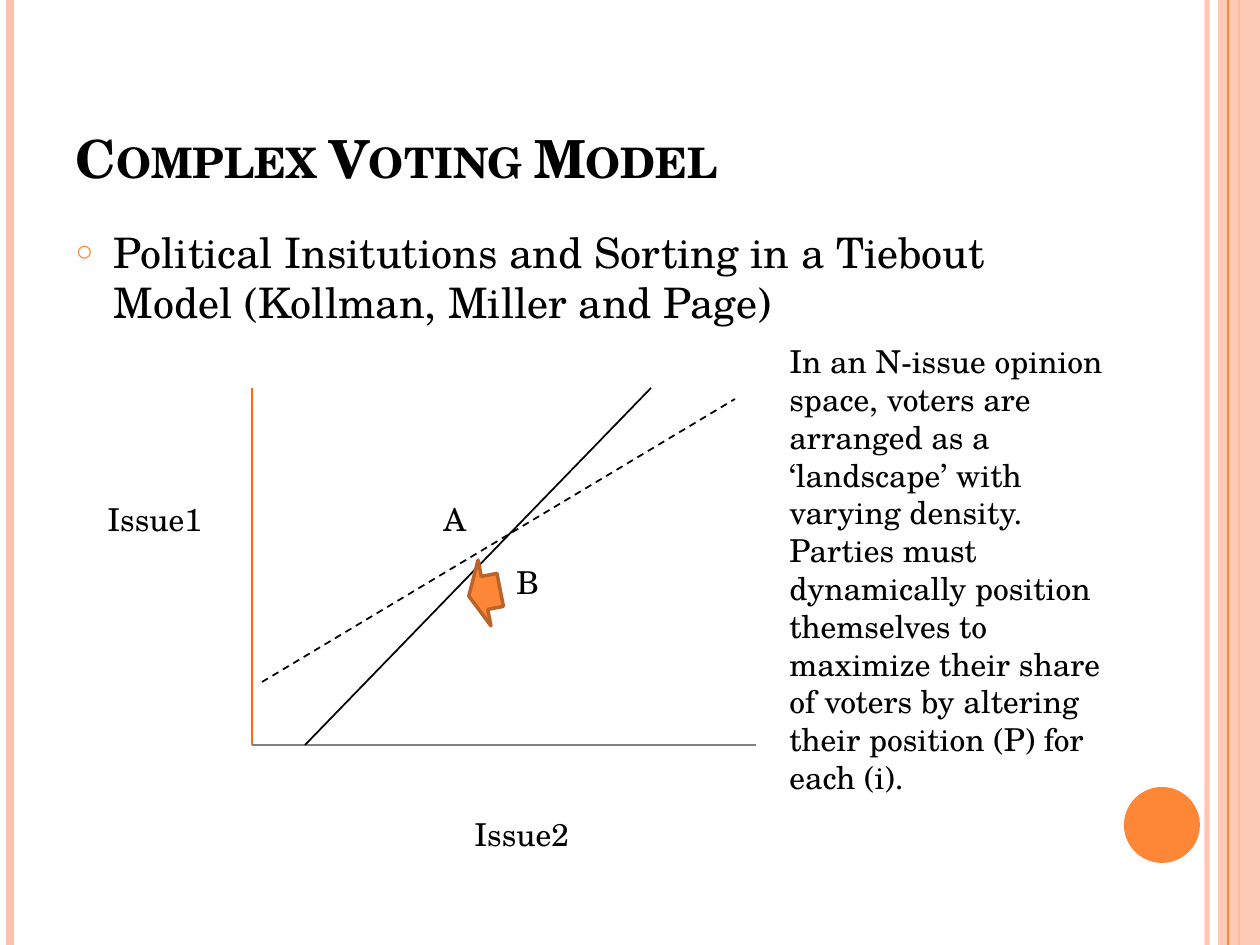
from lxml import etree
from pptx import Presentation
from pptx import util as u
from pptx.dml import color
from pptx.enum import dml, shapes, text
from pptx.oxml import ns

SCALE = 914400 / 126  # EMU in one px
FONT = "TeX Gyre Schola"
ORANGE, PINK, BLACK = "FE8637", "FEC3AE", "000000"
WIDE, HIGH = 1260, 945


def px(*nums):
    return [u.Emu(round(n * SCALE)) for n in nums]


def rgb(code):
    return color.RGBColor.from_string(code)


def sub(node, tag, **attrs):
    item = etree.SubElement(node, ns.qn(tag))
    for key, val in attrs.items():
        item.set(key, str(val))
    return item


def fade(fill, alpha):
    """Set the opacity of a solid fill, in percent."""
    sub(fill.find(".//" + ns.qn("a:srgbClr")), "a:alpha", val=alpha * 1000)


def line(slide, start, end, code, width, dash=None, alpha=None):
    rule = slide.shapes.add_connector(
        shapes.MSO_CONNECTOR.STRAIGHT, *px(*start, *end))
    rule.line.color.rgb = rgb(code)
    rule.line.width = u.Pt(width)
    if dash:
        rule.line.dash_style = dash
    props = rule._element.spPr
    if alpha:
        fade(props.find(ns.qn("a:ln")), alpha)
    sub(props, "a:effectLst")


def solid(slide, kind, box, fill, edge=None, width=2):
    shape = slide.shapes.add_shape(kind, *px(*box))
    shape.shadow.inherit = False
    shape.fill.solid()
    shape.fill.fore_color.rgb = rgb(fill)
    if edge:
        shape.line.color.rgb = rgb(edge)
        shape.line.width = u.Pt(width)
    else:
        shape.line.fill.background()
    return shape


def write(frame, paras, size, bold=False):
    style = {"name": FONT, "size": u.Pt(size), "bold": bold}
    for i, words in enumerate(paras):
        para = frame.add_paragraph() if i else frame.paragraphs[0]
        para.alignment = text.PP_ALIGN.LEFT
        run = para.add_run()
        run.text = words
        for key, val in style.items():
            setattr(run.font, key, val)
        run.font.color.rgb = rgb(BLACK)


def note(slide, box, *paras, wrap=False):
    frame = slide.shapes.add_textbox(*px(*box)).text_frame
    frame.word_wrap = wrap
    write(frame, paras, 18)


def place(holder, box, anchor):
    """Move a placeholder and return its text frame."""
    for key, val in zip(("left", "top", "width", "height"), px(*box)):
        setattr(holder, key, val)
    frame = holder.text_frame
    for key, val in {"word_wrap": True, "vertical_anchor": anchor,
                     "auto_size": text.MSO_AUTO_SIZE.NONE}.items():
        setattr(frame, key, val)
    return frame


def trim(slide, wide, high):
    """Stripes at both edges and the disc at lower right."""
    def stripe(x, code, width, alpha=None):
        line(slide, (x, 0), (x, high), code, width, alpha=alpha)

    stripe(wide - 53, PINK, 3, 93)
    stripe(10, PINK, 4.5)
    stripe(wide - 21, ORANGE, 1.5)
    band = solid(slide, shapes.MSO_SHAPE.RECTANGLE,
                 (wide - 42, 0, 42, high), PINK)
    fade(band._element.spPr, 87)
    stripe(wide - 32, ORANGE, 0.75)
    solid(slide, shapes.MSO_SHAPE.OVAL,
          (wide - 136, high - 158, 76, 76), ORANGE)


def head(slide, box):
    frame = place(slide.shapes.title, box, text.MSO_ANCHOR.BOTTOM)
    write(frame, ["Complex Voting Model"], 30, bold=True)
    frame.paragraphs[0].runs[0].font._element.set("cap", "small")


def bullet(slide, box):
    frame = place(slide.placeholders[1], box, text.MSO_ANCHOR.TOP)
    write(frame, ["Political Insitutions and Sorting in a Tiebout Model "
                  "(Kollman, Miller and Page)"], 24)
    para = frame.paragraphs[0]
    para.space_before = u.Pt(6)
    props = para._p.get_or_add_pPr()
    indent = px(38)[0]
    props.set("marL", str(indent))
    props.set("indent", str(-indent))
    sub(sub(props, "a:buClr"), "a:srgbClr", val=ORANGE)
    sub(props, "a:buSzPct", val=70000)
    sub(props, "a:buChar", char="○")


def graph(slide, x, y, wide, high):
    """Two issue axes with the lines that cross between A and B."""
    base = y + high
    line(slide, (x, y), (x, base), "FF6B0A", 1)
    line(slide, (x, base), (x + wide, base), "808080", 0.75)

    # Labels
    for name, dx, dy, width in (("Issue1", -157, 106, 121),
                                ("Issue2", 210, 421, 121),
                                ("A", 179, 106, 48), ("B", 252, 169, 53)):
        note(slide, (x + dx, y + dy, width, 51), name)

    # Solid and dashed lines
    line(slide, (x + 53, base), (x + 399, y), BLACK, 1)
    line(slide, (x + 10, base - 63), (x + 483, y + 11), BLACK, 1,
         dml.MSO_LINE.DASH)

    # Arrow from B toward A
    arrow = solid(slide, shapes.MSO_SHAPE.DOWN_ARROW,
                  (x + 199, y + 189, 67, 32), ORANGE, "BC6329")
    arrow.rotation = 78.9


def main():
    deck = Presentation()
    deck.slide_width, deck.slide_height = px(WIDE, HIGH)
    slide = deck.slides.add_slide(deck.slide_layouts[1])
    trim(slide, WIDE, HIGH)
    head(slide, (63, 38, 1029, 157))
    bullet(slide, (63, 220, 1029, 116))
    graph(slide, 252, 388, 504, 357)
    note(slide, (777, 336, 357, 471),
         "In an N-issue opinion space, voters are arranged as a "
         "‘landscape’ with varying density.",
         "Parties must dynamically position themselves to maximize their "
         "share of voters by altering their position (P) for each (i).",
         wrap=True)
    deck.save("out.pptx")


if __name__ == "__main__":
    main()
